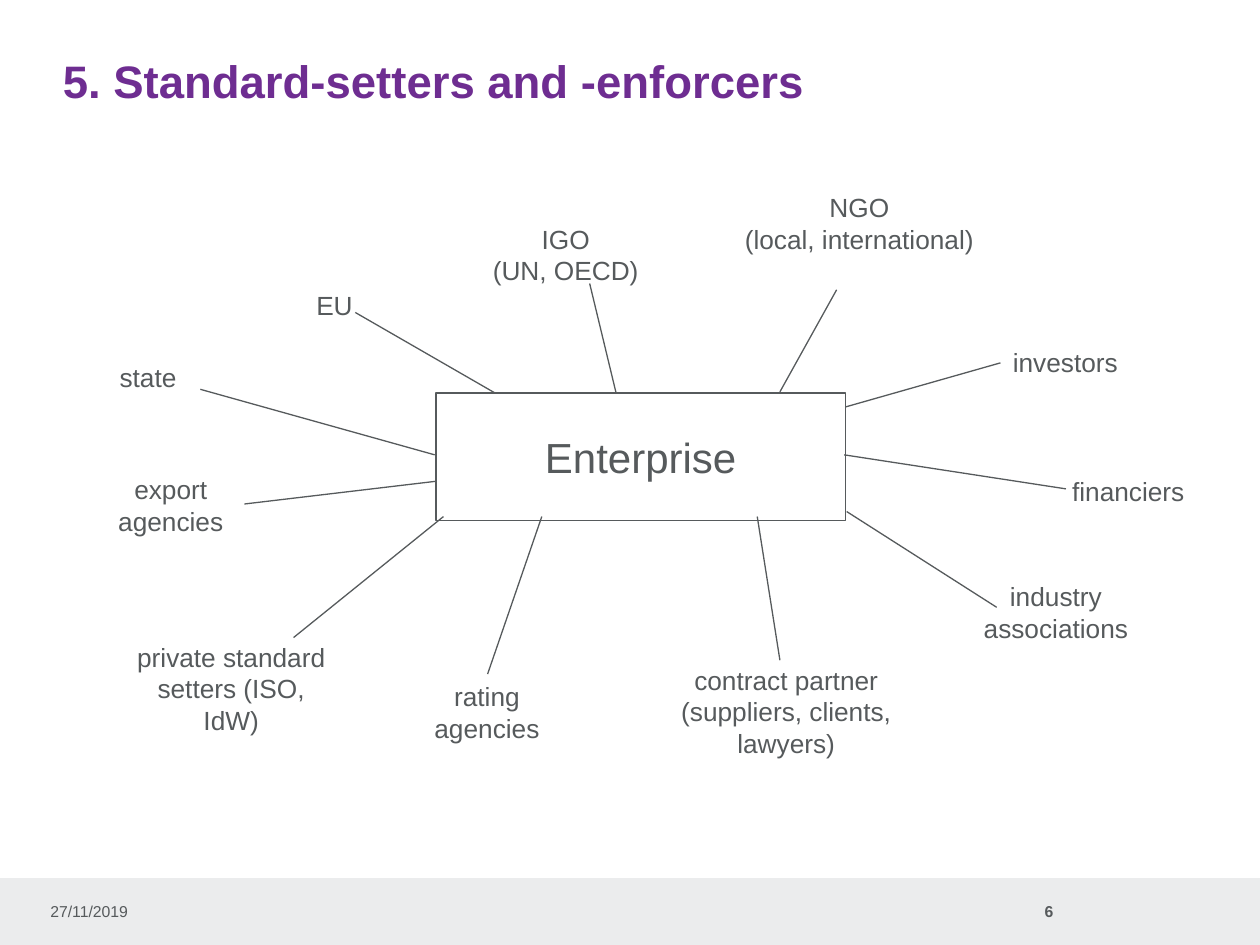
import dataclasses

import pptx
import pptx.dml.color
import pptx.enum.shapes
import pptx.enum.text
import pptx.oxml.ns
import pptx.util
from lxml import etree

Inches = pptx.util.Inches
Align = pptx.enum.text.PP_ALIGN
Anchor = pptx.enum.text.MSO_ANCHOR


@dataclasses.dataclass(frozen=True)
class Theme:
    font: str = "Arial"
    ink: str = "565A5C"
    accent: str = "6E2D91"
    band: str = "EBECED"
    title_size: float = 26
    center_size: float = 24
    label_size: float = 15
    footer_size: float = 9
    line_width: float = 0.75


@dataclasses.dataclass(frozen=True)
class Box:
    left: float
    top: float
    width: float
    height: float

    def inside(self, left, top, width, height):
        """Box placed relative to this one's corner."""
        return Box(self.left + left, self.top + top, width, height)

    def lengths(self):
        return [Inches(value) for value in dataclasses.astuple(self)]


THEME = Theme()

# text, label box, line start, line end; all relative to the diagram
STAKEHOLDERS = [
    ("state", (0.05, 1.42, 1.25, 0.35), (1.09, 1.69), (2.95, 2.21)),
    ("EU", (1.53, 0.85, 1.25, 0.35), (2.32, 1.08), (3.43, 1.72)),
    ("IGO\n(UN, OECD)", (3.27, 0.32, 1.44, 0.61), (4.18, 0.85), (4.39, 1.72)),
    ("NGO\n(local, international)", (5.31, 0.07, 2.02, 0.86), (6.14, 0.9), (5.69, 1.71)),
    ("investors", (7.33, 1.3, 1.25, 0.35), (7.44, 1.48), (6.21, 1.83)),
    ("financiers", (7.83, 2.32, 1.25, 0.35), (7.96, 2.48), (6.2, 2.21)),
    ("industry\nassociations", (7.14, 3.16, 1.48, 0.61), (7.41, 3.42), (6.22, 2.66)),
    ("contract partner\n(suppliers, clients, lawyers)", (4.49, 3.82, 2.5, 0.86),
     (5.69, 3.84), (5.51, 2.7)),
    ("rating agencies", (2.7, 3.95, 1.33, 0.61), (3.37, 3.95), (3.8, 2.7)),
    ("export agencies", (0.08, 2.31, 1.55, 0.61), (1.44, 2.6), (2.96, 2.42)),
    ("private standard setters (ISO, IdW)", (0.48, 3.64, 1.71, 0.86),
     (1.83, 3.66), (3.02, 2.7)),
]


def color(value):
    return pptx.dml.color.RGBColor.from_string(value)


def write_text(shape, text, size, ink=THEME.ink, bold=False, align=Align.LEFT,
               anchor=Anchor.TOP, wrap=True, inset=None):
    """Fill a shape with text, one paragraph per line."""
    frame = shape.text_frame
    frame.word_wrap = wrap
    frame.vertical_anchor = anchor
    if inset is not None:
        frame.margin_left = frame.margin_right = Inches(inset)
        frame.margin_top = frame.margin_bottom = Inches(inset)
    frame.text = text
    for paragraph in frame.paragraphs:
        paragraph.alignment = align
        paragraph.font.name = THEME.font
        paragraph.font.size = pptx.util.Pt(size)
        paragraph.font.bold = bold
        paragraph.font.color.rgb = color(ink)


def add_text(slide, box, text, size, **text_format):
    write_text(slide.shapes.add_textbox(*box.lengths()), text, size, **text_format)


def add_rectangle(slide, box, fill=None, line=None):
    shape = slide.shapes.add_shape(
        pptx.enum.shapes.MSO_SHAPE.RECTANGLE, *box.lengths())
    shape.shadow.inherit = False
    if fill:
        shape.fill.solid()
        shape.fill.fore_color.rgb = color(fill)
    else:
        shape.fill.background()
    if line:
        shape.line.color.rgb = color(line)
        shape.line.width = pptx.util.Pt(THEME.line_width)
    else:
        shape.line.fill.background()
    return shape


def add_line(slide, box, start, end):
    points = [Inches(value) for x, y in (start, end)
              for value in (box.left + x, box.top + y)]
    connector = slide.shapes.add_connector(
        pptx.enum.shapes.MSO_CONNECTOR.STRAIGHT, *points)
    connector.line.color.rgb = color(THEME.ink)
    connector.line.width = pptx.util.Pt(THEME.line_width)
    etree.SubElement(connector.element.spPr, pptx.oxml.ns.qn("a:effectLst"))


def add_title(slide, box):
    add_text(slide, box, "5. Standard-setters and -enforcers",
             THEME.title_size, ink=THEME.accent, bold=True)


def add_diagram(slide, box):
    """Enterprise in the middle, joined to each stakeholder around it."""
    enterprise = add_rectangle(
        slide, box.inside(2.96, 1.72, 3.25, 1.01), line=THEME.ink)
    write_text(enterprise, "Enterprise", THEME.center_size,
               align=Align.CENTER, anchor=Anchor.MIDDLE)
    for text, place, start, end in STAKEHOLDERS:
        add_text(slide, box.inside(*place), text, THEME.label_size,
                 align=Align.CENTER)
        add_line(slide, box, start, end)


def add_footer(slide, box):
    add_rectangle(slide, box, fill=THEME.band)
    add_text(slide, box.inside(0.4, 0.18, 2.36, 0.16), "27/11/2019",
             THEME.footer_size, anchor=Anchor.MIDDLE, inset=0)
    add_text(slide, box.inside(8.2, 0.18, 0.16, 0.16), "6", THEME.footer_size,
             bold=True, align=Align.RIGHT, anchor=Anchor.MIDDLE, wrap=False, inset=0)


def main():
    presentation = pptx.Presentation()
    presentation.slide_width = Inches(10)
    presentation.slide_height = Inches(7.5)
    slide = presentation.slides.add_slide(presentation.slide_layouts[6])
    add_footer(slide, Box(0, 6.97, 10, 0.53))
    add_diagram(slide, Box(0.5, 1.4, 9.1, 4.7))
    add_title(slide, Box(0.4, 0.37, 9.2, 0.43))
    presentation.save("out.pptx")


if __name__ == "__main__":
    main()
